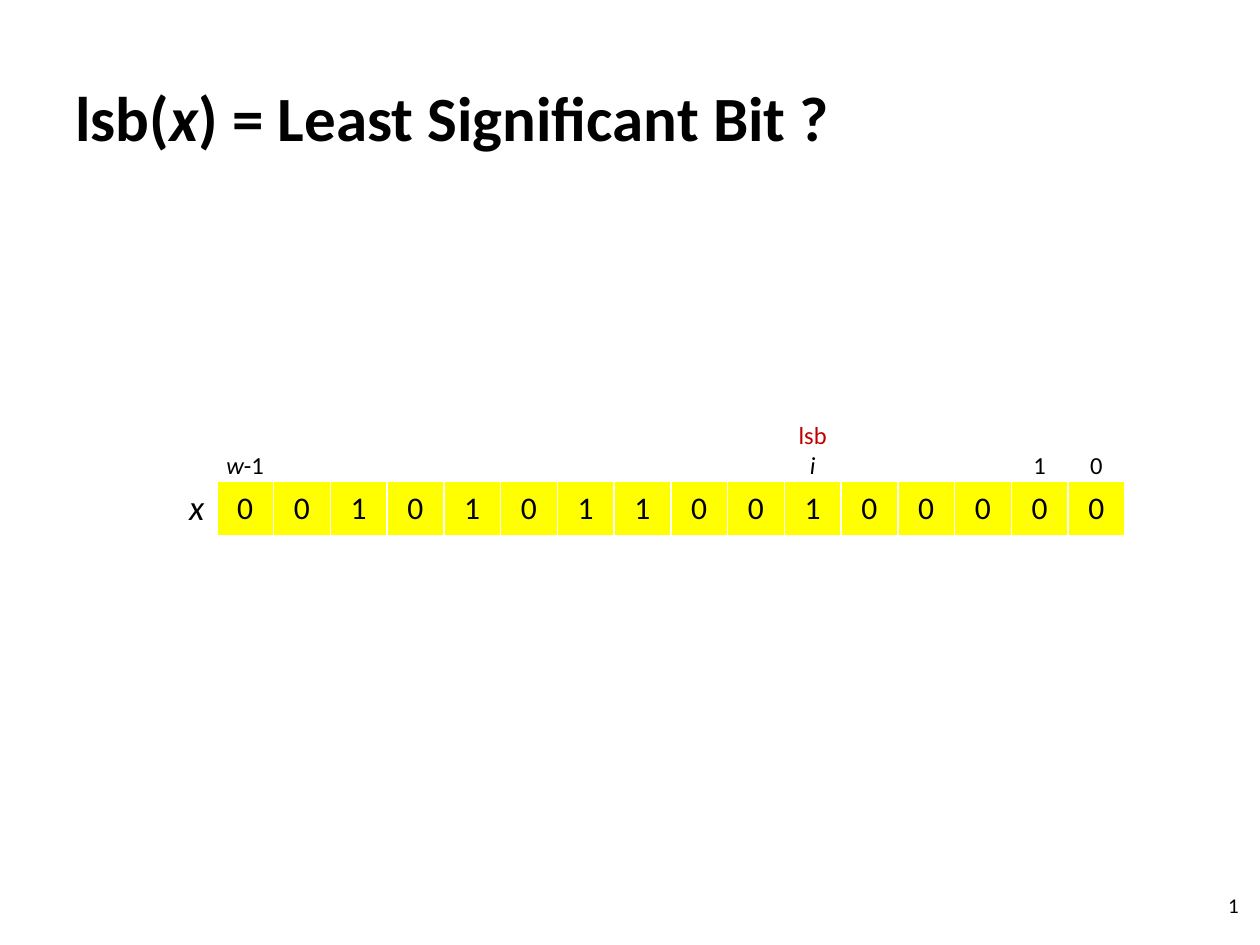
import pptx
import pptx.dml.color
import pptx.enum.text
import pptx.oxml
import pptx.oxml.ns
import pptx.util
from pptx.util import Inches

COLORS = {"text": "000000", "lsb": "C00000", "bit": "FFFF00", "border": "FFFFFF"}
ALIGN = pptx.enum.text.PP_ALIGN
ANCHOR = pptx.enum.text.MSO_ANCHOR
BITS = "0010101100100000"
INDEX_LABELS = {
    1: [[("w", {"italic": True}), ("-1", {})]],
    11: [[("lsb", {"color": "lsb"})], [("i", {"italic": True})]],
    15: [[("1", {})]],
    16: [[("0", {})]],
}


def rgb(name):
    return pptx.dml.color.RGBColor.from_string(COLORS[name])


def write_text(text_frame, paragraphs, size, alignment, bold=False):
    for index, runs in enumerate(paragraphs):
        paragraph = text_frame.paragraphs[0] if index == 0 else text_frame.add_paragraph()
        paragraph.alignment = alignment
        for text, changes in runs:
            run = paragraph.add_run()
            run.text = text
            values = {"name": "Calibri", "size": pptx.util.Pt(size), "bold": bold,
                      "italic": changes.get("italic", False)}
            for attribute, value in values.items():
                setattr(run.font, attribute, value)
            run.font.color.rgb = rgb(changes.get("color", "text"))


def add_text(slide, box, runs, size, alignment, bold=False):
    shape = slide.shapes.add_textbox(*map(Inches, box))
    shape.text_frame.word_wrap = True
    shape.text_frame.vertical_anchor = ANCHOR.MIDDLE
    write_text(shape.text_frame, [runs], size, alignment, bold)


def add_borders(cell):
    properties = cell._tc.get_or_add_tcPr()
    namespace = pptx.oxml.ns.nsdecls("a")
    for position, side in enumerate(("lnL", "lnR", "lnT", "lnB")):
        properties.insert(position, pptx.oxml.parse_xml(
            f'<a:{side} {namespace} w="12700"><a:solidFill>'
            f'<a:srgbClr val="{COLORS["border"]}"/></a:solidFill></a:{side}>'))


def fill_index_cell(cell, column):
    values = {"vertical_anchor": ANCHOR.BOTTOM, "margin_left": 0, "margin_right": 0,
              "margin_top": 0, "margin_bottom": 0}
    for attribute, value in values.items():
        setattr(cell, attribute, value)
    cell.fill.background()
    write_text(cell.text_frame, INDEX_LABELS.get(column, []), 14, ALIGN.CENTER)


def fill_bit_cell(cell, column):
    cell.vertical_anchor = ANCHOR.MIDDLE
    if column == 0:
        cell.fill.background()
        write_text(cell.text_frame, [[("x", {"italic": True})]], 20, ALIGN.RIGHT)
    else:
        cell.fill.solid()
        cell.fill.fore_color.rgb = rgb("bit")
        write_text(cell.text_frame, [[(BITS[column - 1], {})]], 18, ALIGN.CENTER)


def add_bit_table(slide, box):
    left, top, width, height = map(Inches, box)
    column_count = len(BITS) + 1
    table = slide.shapes.add_table(2, column_count, left, top, width, height).table
    for attribute in ("first_row", "horz_banding"):
        setattr(table, attribute, False)
    bit_height = Inches(0.41)
    table.rows[0].height = height - bit_height
    table.rows[1].height = bit_height
    for column in range(column_count):
        table.columns[column].width = width // column_count
        fill_index_cell(table.cell(0, column), column)
        fill_bit_cell(table.cell(1, column), column)
        for row in range(2):
            add_borders(table.cell(row, column))


def main():
    presentation = pptx.Presentation()
    presentation.slide_width = Inches(10)
    presentation.slide_height = Inches(7.5)
    slide = presentation.slides.add_slide(presentation.slide_layouts[6])
    title = [("lsb(", {}), ("x", {"italic": True}), (") = Least Significant Bit ?", {})]
    add_text(slide, (0.5, 0.3, 9, 1.25), title, 36, ALIGN.LEFT, bold=True)
    add_text(slide, (7.6, 6.98, 2.33, 0.4), [("1", {})], 12, ALIGN.RIGHT)
    add_bit_table(slide, (1.27, 3.33, 7.66, 0.9))
    presentation.save("out.pptx")


if __name__ == "__main__":
    main()
